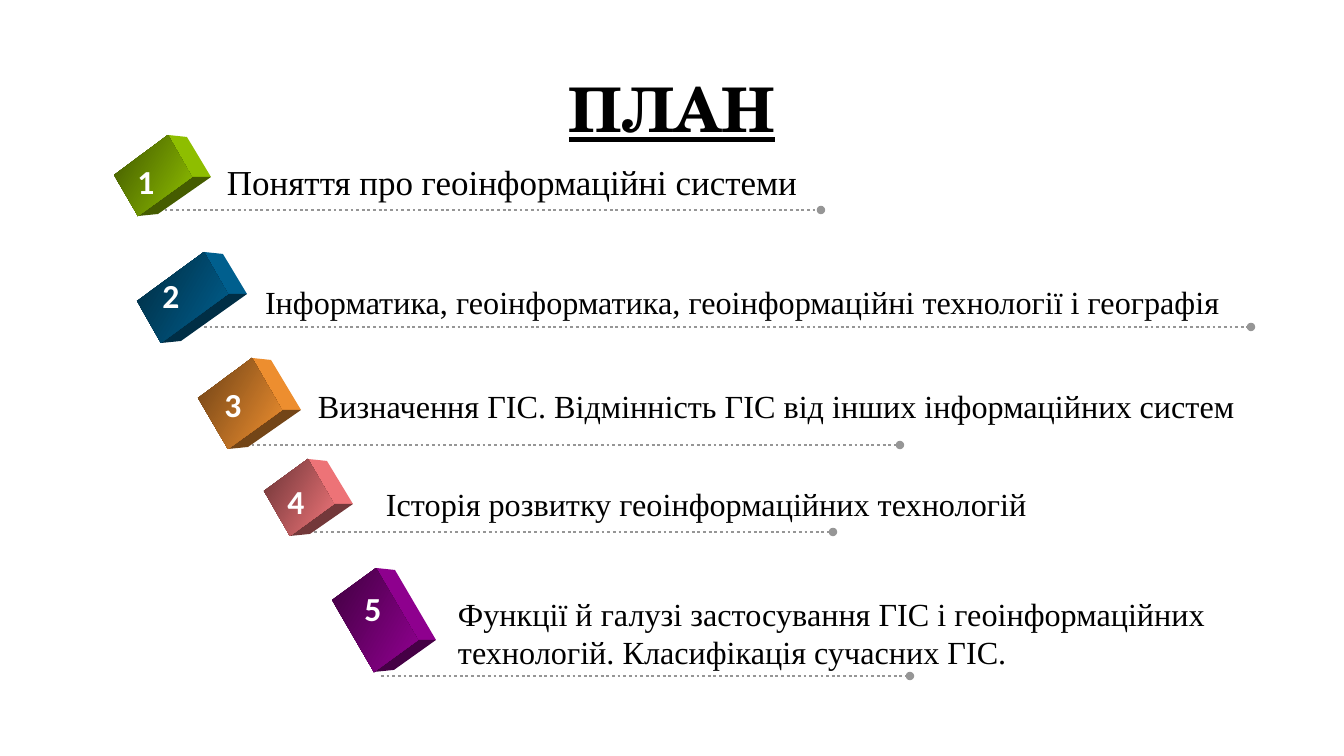
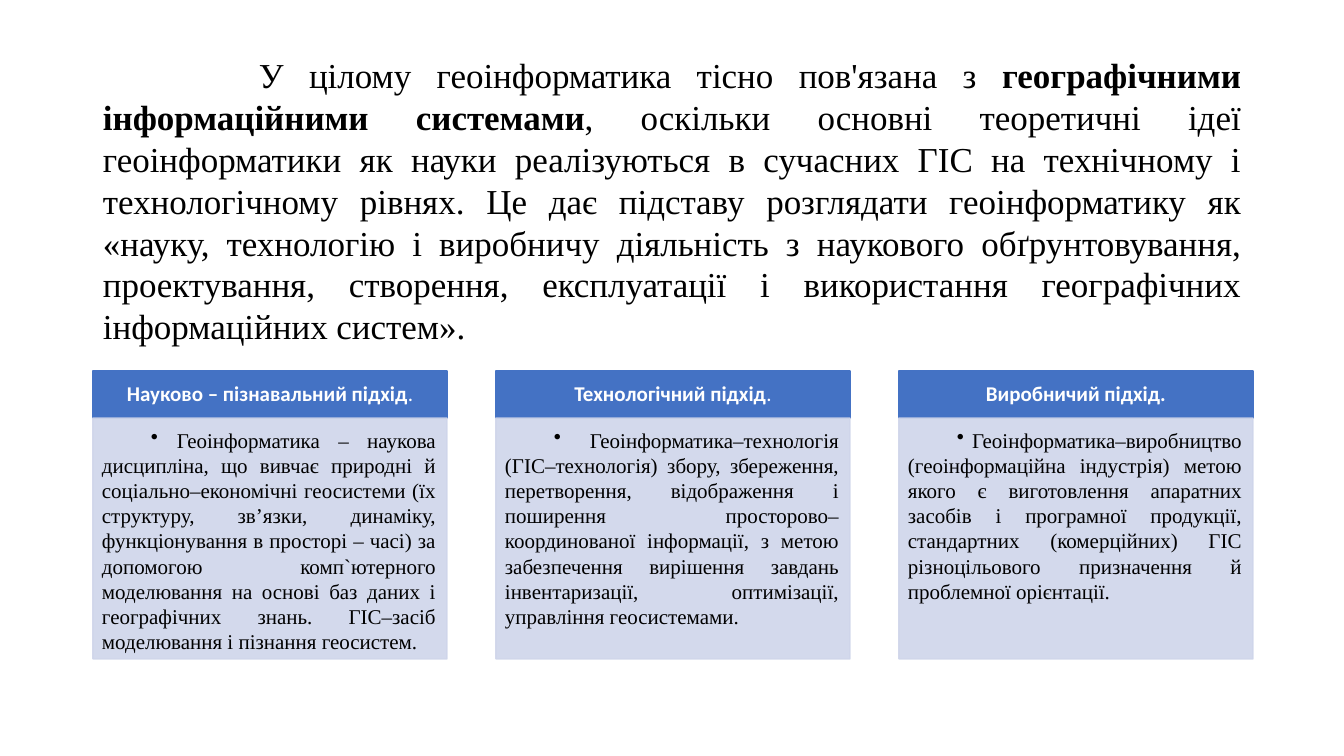
from lxml import etree
from pptx import Presentation
from pptx import util as u
from pptx.dml.color import RGBColor
from pptx.enum import dml, shapes, text
from pptx.oxml import ns

PX = 914400 / 100.8
SERIF, SANS, DISPLAY = "Times New Roman", "Calibri", "TeX Gyre Schola"
COLORS = {
    "ink": "000000", "white": "FFFFFF", "rule": "969696",
    "header": "4472C4", "body": "CFD5EA",
    "green": "99CC00", "blue": "006699", "orange": "FF9933",
    "pink": "FF7C80", "purple": "990099",
}
LEFT, ANCHOR = text.PP_ALIGN.LEFT, text.MSO_ANCHOR
CENTER, JUSTIFY = text.PP_ALIGN.CENTER, text.PP_ALIGN.JUSTIFY

PLAN = [
    dict(color="green", cube=(168, 135, 48, 67), number=(146, 181),
         rule=(159, 821, 210), caption=(217, 155), size=25,
         lines=["Поняття про геоінформаційні системи"]),
    dict(color="blue", cube=(204, 252, 48, 83), number=(171, 295),
         rule=(204, 1251, 327), caption=(255, 277), size=23,
         lines=["Інформатика, геоінформатика, геоінформаційні технології і географія"]),
    dict(color="orange", cube=(252, 358, 60, 67), number=(233, 404),
         rule=(246, 900, 445), caption=(308, 381), size=23,
         lines=["Визначення ГІС. Відмінність ГІС від інших інформаційних систем"]),
    dict(color="pink", cube=(308, 459, 52, 54), number=(296, 501),
         rule=(303, 833, 532), caption=(376, 479), size=23,
         lines=["Історія розвитку геоінформаційних технологій"]),
    dict(color="purple", cube=(376, 568, 83, 54), number=(373, 608),
         rule=(381, 910, 676), caption=(448, 589), size=23,
         lines=["Функції й галузі застосування ГІС і геоінформаційних",
                "технологій. Класифікація сучасних ГІС."]),
]

INTRO = [
    ("У цілому геоінформатика тісно пов'язана з ", False),
    ("географічними інформаційними системами", True),
    (", оскільки основні теоретичні ідеї геоінформатики як науки реалізуються "
     "в сучасних ГІС на технічному і технологічному рівнях. Це дає підставу "
     "розглядати геоінформатику як «науку, технологію і виробничу діяльність "
     "з наукового обґрунтовування, проектування, створення, експлуатації "
     "і використання географічних інформаційних систем».", False),
]

APPROACHES = [
    ([("Науково – пізнавальний підхід", True), (".", False)],
     " Геоінформатика – наукова дисципліна, що вивчає природні й "
     "соціально–економічні геосистеми (їх структуру, зв’язки, динаміку, "
     "функціонування в просторі – часі) за допомогою комп`ютерного "
     "моделювання на основі баз даних і географічних знань. ГІС–засіб "
     "моделювання і пізнання геосистем."),
    ([("Технологічний підхід", True), (".", False)],
     " Геоінформатика–технологія (ГІС–технологія) збору, збереження, "
     "перетворення, відображення і поширення просторово– координованої "
     "інформації, з метою забезпечення вирішення завдань інвентаризації, "
     "оптимізації, управління геосистемами."),
    ([("Виробничий підхід.", True)],
     " Геоінформатика–виробництво (геоінформаційна індустрія) метою якого є "
     "виготовлення апаратних засобів і програмної продукції, стандартних "
     "(комерційних) ГІС різноцільового призначення й проблемної орієнтації."),
]


def px(n):
    """Turn px into EMU."""
    return u.Emu(round(n * PX))


def rgb(name, shade=1.0):
    """Return a named colour, darkened by a factor."""
    value = COLORS[name]
    return RGBColor(*(round(int(value[i:i + 2], 16) * shade) for i in (0, 2, 4)))


def write(s, paragraphs, size, font=SERIF, color="ink", align=LEFT,
          anchor=ANCHOR.TOP, bold=False, underline=False, indent=0, bullet=None,
          spacing=None, insets=(10, 5, 10, 5), wrap=True):
    """Fill a shape with paragraphs, each a string or a list of (text, bold)."""
    tf = s.text_frame
    tf.word_wrap, tf.vertical_anchor = wrap, anchor
    tf.margin_left, tf.margin_top, tf.margin_right, tf.margin_bottom = map(px, insets)
    for i, runs in enumerate(paragraphs):
        p = tf.add_paragraph() if i else tf.paragraphs[0]
        p.alignment = align
        if spacing:
            p.line_spacing = spacing
        pr = p._p.get_or_add_pPr()
        if indent:
            pr.set("marL", "0")
            pr.set("indent", str(px(indent)))
        if bullet:
            etree.SubElement(pr, ns.qn("a:buChar")).set("char", bullet)
        for words, heavy in [(runs, bold)] if isinstance(runs, str) else runs:
            r = p.add_run()
            r.text = words
            r.font.name, r.font.size = font, u.Pt(size)
            r.font.bold, r.font.underline = heavy, underline
            r.font.color.rgb = rgb(color)


def add_text(slide, box, paragraphs, size, **style):
    """Add a text box at box (left, top, width, height)."""
    write(slide.shapes.add_textbox(*map(px, box)), paragraphs, size, **style)


def add_panel(slide, box, color, alpha=None):
    """Add a flat rectangle with a matching outline and optional alpha percent."""
    s = slide.shapes.add_shape(shapes.MSO_SHAPE.RECTANGLE, *map(px, box))
    s.shadow.inherit = False
    s.fill.solid()
    s.fill.fore_color.rgb = s.line.color.rgb = rgb(color)
    s.line.width = u.Pt(1)
    if alpha:
        for clr in s._element.spPr.iter(ns.qn("a:srgbClr")):
            etree.SubElement(clr, ns.qn("a:alpha")).set("val", str(alpha * 1000))
    return s


def add_face(slide, points):
    """Add one outline-free polygon of a cube."""
    builder = slide.shapes.build_freeform(*points[0], scale=PX)
    builder.add_line_segments(points[1:], close=True)
    s = builder.convert_to_shape()
    s.shadow.inherit = False
    s.line.fill.background()
    return s


def add_cube(slide, x, y, width, length, color):
    """Draw a tilted block whose front face starts at its top corner."""
    across = (width * 0.5, width * 0.866)
    down = (-length * 0.81, length * 0.59)
    top = (x, y)
    right = (x + across[0], y + across[1])
    left = (x + down[0], y + down[1])
    bottom = (right[0] + down[0], right[1] + down[1])
    back_top = (top[0] + 19, top[1] + 2)
    back_right = (right[0] + 19, right[1])
    back_bottom = (bottom[0] + 20, bottom[1] - 2)
    for points, shade in (((top, right, back_right, back_top), 0.93),
                          ((bottom, right, back_right, back_bottom), 0.45)):
        s = add_face(slide, points)
        s.fill.solid()
        s.fill.fore_color.rgb = rgb(color, shade)
    front = add_face(slide, (top, right, bottom, left))
    front.fill.gradient()
    front.fill.gradient_angle = 330
    for stop, shade, position in zip(front.fill.gradient_stops, (0.42, 0.95), (0, 1)):
        stop.color.rgb = rgb(color, shade)
        stop.position = position


def add_rule(slide, x1, x2, y):
    """Draw a dotted line with a round end."""
    c = slide.shapes.add_connector(shapes.MSO_CONNECTOR.STRAIGHT,
                                   px(x1), px(y), px(x2), px(y))
    c.line.color.rgb = rgb("rule")
    c.line.width = u.Pt(2)
    c.line.dash_style = dml.MSO_LINE.ROUND_DOT
    etree.SubElement(c.line._get_or_add_ln(), ns.qn("a:tailEnd")).set("type", "oval")
    etree.SubElement(c._element.spPr, ns.qn("a:effectLst"))


def add_plan_item(slide, number, item):
    """Place one numbered plan row."""
    add_rule(slide, *item["rule"])
    add_cube(slide, *item["cube"], item["color"])
    x, y = item["caption"]
    add_text(slide, (x, y, 1344 - x, 10 + 39 * len(item["lines"])),
             item["lines"], item["size"])
    x, y = item["number"]
    add_text(slide, (x - 20, y - 25, 40, 50), [str(number)], 24, font=SANS,
             color="white", bold=True, align=CENTER, anchor=ANCHOR.MIDDLE, wrap=False)


def add_approach(slide, x, y, heading, body):
    """Place one card: a header band over a justified body."""
    width, band = 354, 47
    write(add_panel(slide, (x, y, width, band), "header"), [heading], 15,
          font=SANS, color="white", align=CENTER, anchor=ANCHOR.MIDDLE,
          spacing=0.9, insets=(12, 7, 12, 7))
    write(add_panel(slide, (x, y + band, width, 241), "body", alpha=90), [body], 15,
          align=JUSTIFY, indent=49, bullet="•", insets=(9, 9, 11, 13))


def build_plan(slide):
    """Build the plan slide."""
    add_text(slide, (93, 40, 1158, 146), ["ПЛАН"], 44, font=DISPLAY, bold=True,
             underline=True, align=CENTER, anchor=ANCHOR.MIDDLE, spacing=0.9)
    for number, item in enumerate(PLAN, 1):
        add_plan_item(slide, number, item)


def build_approaches(slide):
    """Build the slide with the introduction and three cards."""
    add_text(slide, (93, 47, 1158, 306), [INTRO], 25, align=JUSTIFY,
             anchor=ANCHOR.MIDDLE, indent=156)
    for i, (heading, body) in enumerate(APPROACHES):
        add_approach(slide, 93 + 403 * i, 371, heading, body)


def main():
    """Build and save the presentation."""
    prs = Presentation()
    prs.slide_width, prs.slide_height = px(1344), px(756)
    for build in (build_plan, build_approaches):
        build(prs.slides.add_slide(prs.slide_layouts[6]))
    prs.save("out.pptx")


if __name__ == "__main__":
    main()
